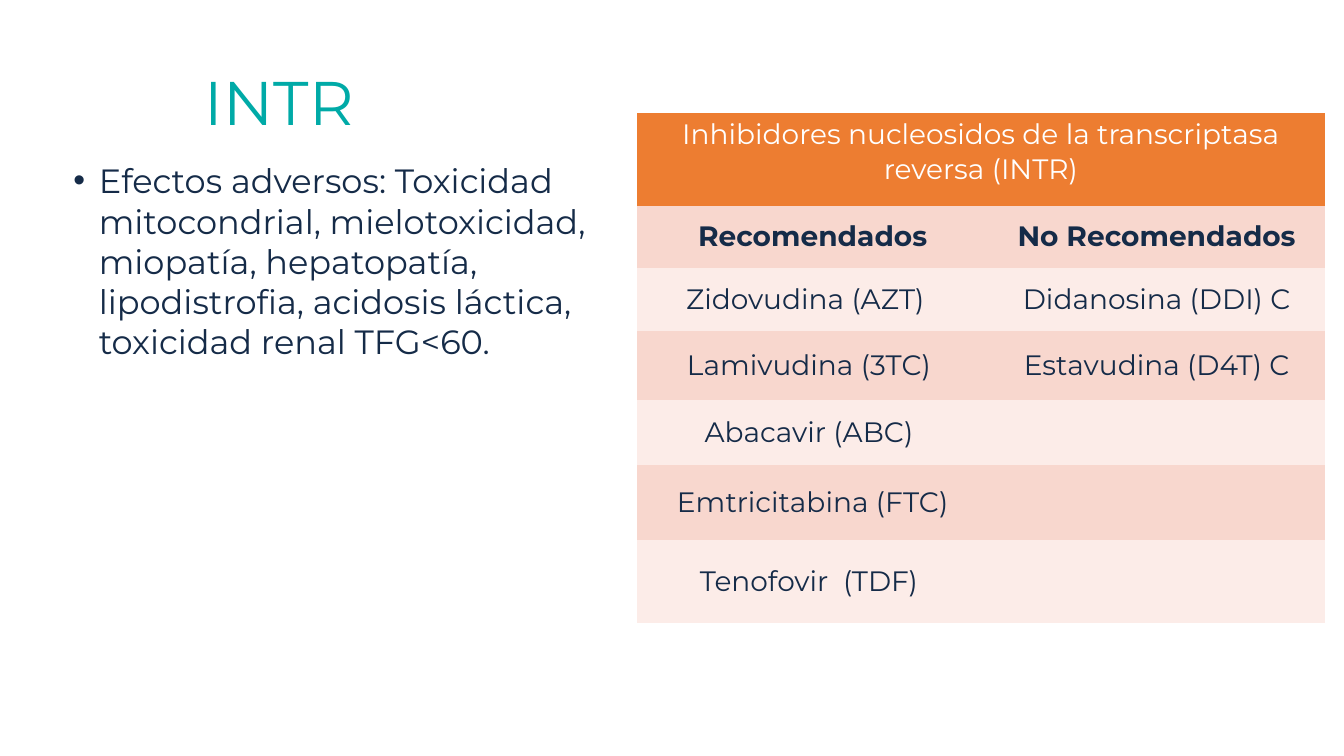
import pptx
import pptx.util
import pptx.dml.color
import pptx.enum.text
import pptx.oxml.ns
from lxml import etree

Cm, Pt = pptx.util.Cm, pptx.util.Pt
RGB = pptx.dml.color.RGBColor
ALIGN = pptx.enum.text.PP_ALIGN
ANCHOR = pptx.enum.text.MSO_ANCHOR
qn = pptx.oxml.ns.qn

# Content
TITLE = "INTR"
EFFECTS = ("Efectos adversos: Toxicidad mitocondrial, mielotoxicidad, miopatía, "
           "hepatopatía, lipodistrofia, acidosis láctica, toxicidad renal TFG<60.")
HEAD = "Inhibidores nucleosidos de la transcriptasa reversa (INTR)"
DRUGS = [
    ("Recomendados", "No Recomendados"),
    ("Zidovudina (AZT)  ", "Didanosina (DDI) C"),
    ("Lamivudina (3TC) ", "Estavudina (D4T) C"),
    ("Abacavir (ABC) ", ""),
    ("Emtricitabina (FTC)", ""),
    ("Tenofovir  (TDF) ", ""),
]

# Look
FONT = "Montserrat"
TEAL = RGB(0x00, 0xAA, 0xA7)
NAVY = RGB(0x15, 0x2B, 0x48)
WHITE = RGB(0xFF, 0xFF, 0xFF)
ORANGE = RGB(0xED, 0x7D, 0x31)
BANDS = [RGB(0xF8, 0xD7, 0xCE), RGB(0xFC, 0xEC, 0xE8)]
PLAIN = "{2D5ABB26-0587-4C30-8999-92F81FD0307C}"  # no style, no grid
COLS = [8.86, 8.48]
ROWS = [2.34, 1.57, 1.6, 1.73, 1.63, 1.9, 2.08]


def write(frame, text, size=20, color=NAVY, bold=False, align=ALIGN.CENTER,
          lines=1.0, bullet=None):
    para = frame.paragraphs[0]
    para.alignment = align
    para.line_spacing = lines
    if bullet:
        props = para._p.get_or_add_pPr()
        props.set("marL", str(Cm(0.64)))
        props.set("indent", str(-Cm(0.64)))
        etree.SubElement(props, qn("a:buFont"), typeface="Arial")
        etree.SubElement(props, qn("a:buChar"), char=bullet)
    if text:
        run = para.add_run()
        run.text = text
        font = run.font
    else:
        font = para.font
    font.name, font.size, font.bold = FONT, Pt(size), bold
    font.color.rgb = color


def add_box(slide, left, top, width, height, anchor):
    box = slide.shapes.add_textbox(Cm(left), Cm(top), Cm(width), Cm(height))
    frame = box.text_frame
    frame.word_wrap = True
    frame.vertical_anchor = anchor
    return frame


def add_drugs(slide):
    shape = slide.shapes.add_table(len(ROWS), len(COLS), Cm(16.05), Cm(2.84),
                                   Cm(sum(COLS)), Cm(sum(ROWS)))
    table = shape.table
    table._tbl.tblPr.find(qn("a:tableStyleId")).text = PLAIN
    for col, width in zip(table.columns, COLS):
        col.width = Cm(width)
    for row, height in zip(table.rows, ROWS):
        row.height = Cm(height)

    # Merged heading
    head = table.cell(0, 0)
    head.merge(table.cell(0, 1))
    head.fill.solid()
    head.fill.fore_color.rgb = ORANGE
    write(head.text_frame, HEAD, color=WHITE)

    # Banded rows
    for r, names in enumerate(DRUGS):
        for c, name in enumerate(names):
            cell = table.cell(r + 1, c)
            cell.fill.solid()
            cell.fill.fore_color.rgb = BANDS[r % 2]
            cell.vertical_anchor = ANCHOR.MIDDLE
            write(cell.text_frame, name, bold=r == 0)


def main():
    deck = pptx.Presentation()
    deck.slide_width, deck.slide_height = Cm(33.87), Cm(19.05)
    slide = deck.slides.add_slide(deck.slide_layouts[6])

    # Title and side effects
    write(add_box(slide, 2.34, 0.81, 9.4, 3.68, ANCHOR.MIDDLE), TITLE,
          size=44, color=TEAL, lines=0.9)
    write(add_box(slide, 1.6, 3.91, 13.97, 6.32, ANCHOR.TOP), EFFECTS,
          size=24, align=ALIGN.LEFT, bullet="•")

    add_drugs(slide)
    deck.save("out.pptx")


if __name__ == "__main__":
    main()
